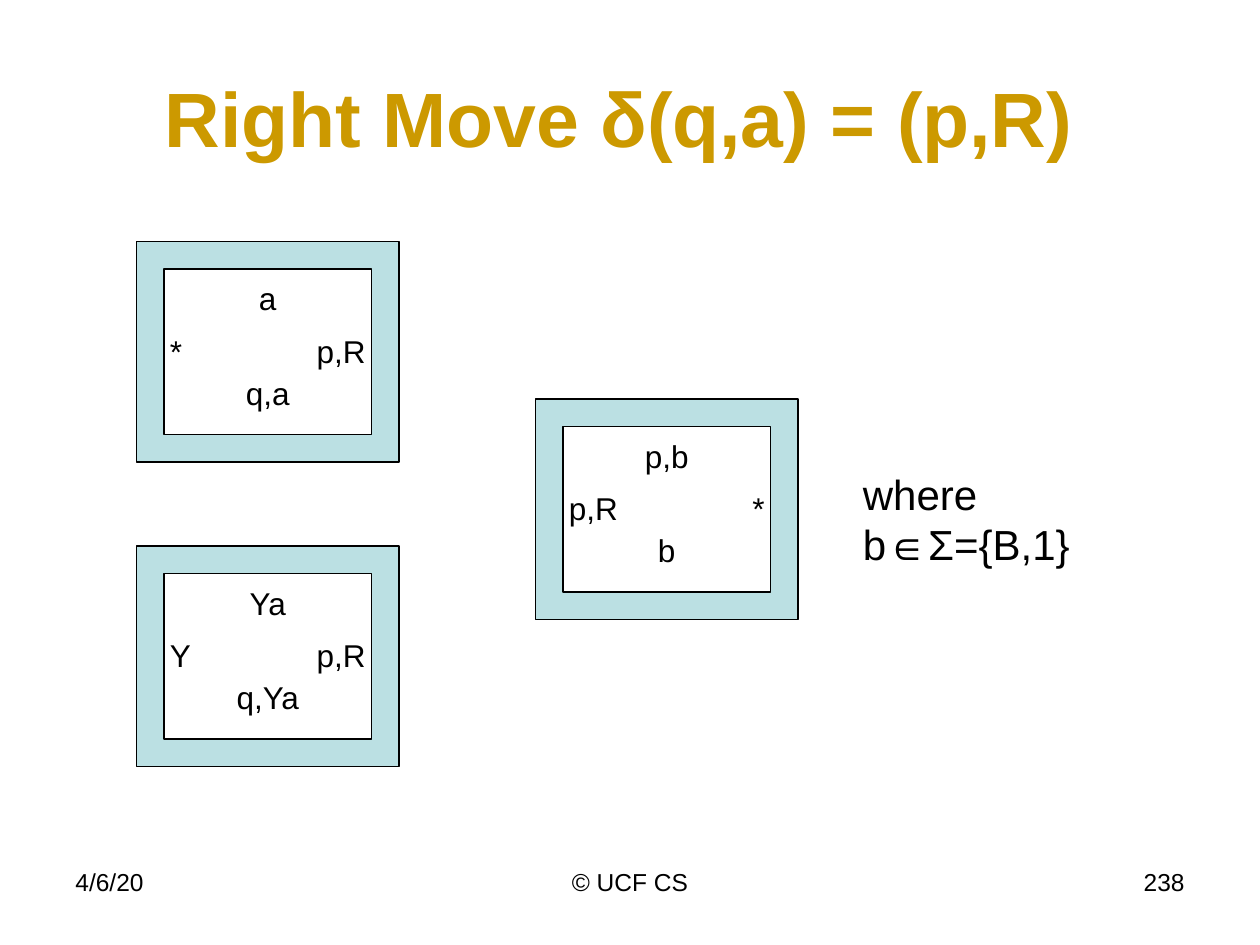
from pptx import Presentation
from pptx.dml.color import RGBColor
from pptx.enum import shapes, text
from pptx.util import Pt

COLORS = {"title": "CC9900", "ink": "000000", "tile": "BBE0E3"}
LEFT, CENTER, RIGHT = text.PP_ALIGN.LEFT, text.PP_ALIGN.CENTER, text.PP_ALIGN.RIGHT


def write(box, words, align, size, color="ink", bold=False):
    """Fill a text holder with one formatted paragraph."""
    box.text_frame.word_wrap = True
    paragraph = box.text_frame.paragraphs[0]
    paragraph.text = words
    paragraph.alignment = align
    font = paragraph.runs[0].font
    for name, value in {"name": "Arial", "size": Pt(size), "bold": bold}.items():
        setattr(font, name, value)
    font.color.rgb = RGBColor.from_string(COLORS[color])


def add_label(x, y, width, height, words, align, size):
    box = slide.shapes.add_textbox(Pt(x), Pt(y), Pt(width), Pt(height))
    write(box, words, align, size)
    return box


prs = Presentation()
prs.slide_width, prs.slide_height = Pt(720), Pt(540)
slide = prs.slides.add_slide(prs.slide_layouts[5])

title = slide.shapes.title
for name, value in {"left": 36, "top": 21.6, "width": 648, "height": 90}.items():
    setattr(title, name, Pt(value))
title.text_frame.vertical_anchor = text.MSO_ANCHOR.MIDDLE
# The trailing space is part of the centred line
write(title, "Right Move δ(q,a) = (p,R) ", CENTER, 44, "title", True)

# Footer row
for x, width, words, align in (
    (36, 168, "4/6/20", LEFT),
    (246, 228, "© UCF CS", CENTER),
    (516, 168, "238", RIGHT),
):
    add_label(x, 492, width, 37.5, words, align, 14)

# Tiles: position, then top, right, left and bottom edge labels
tiles = (
    (78, 312, "Ya", "p,R", "Y", "q,Ya"),
    (78, 138, "a", "p,R", "*", "q,a"),
    (306, 228, "p,b", "*", "p,R", "b"),
)
# Offset from the tile corner, width and alignment of each edge label
edges = ((18, 18, 114, CENTER), (78, 48, 60, RIGHT), (12, 48, 60, LEFT), (18, 72, 114, CENTER))
for x, y, *labels in tiles:
    tile = slide.shapes.add_shape(shapes.MSO_SHAPE.FRAME, Pt(x), Pt(y), Pt(150), Pt(126))
    tile.shadow.inherit = False
    tile.fill.solid()
    tile.fill.fore_color.rgb = RGBColor.from_string(COLORS["tile"])
    tile.line.color.rgb = RGBColor.from_string(COLORS["ink"])
    tile.line.width = Pt(0.75)
    for words, (dx, dy, width, align) in zip(labels, edges):
        add_label(x + dx, y + dy, width, 36, words, align, 18)

condition = add_label(486, 264, 204, 36, "where b∈Σ={B,1}", LEFT, 24)
condition.text_frame.margin_right = Pt(30)  # wraps after "where"

prs.save("out.pptx")
